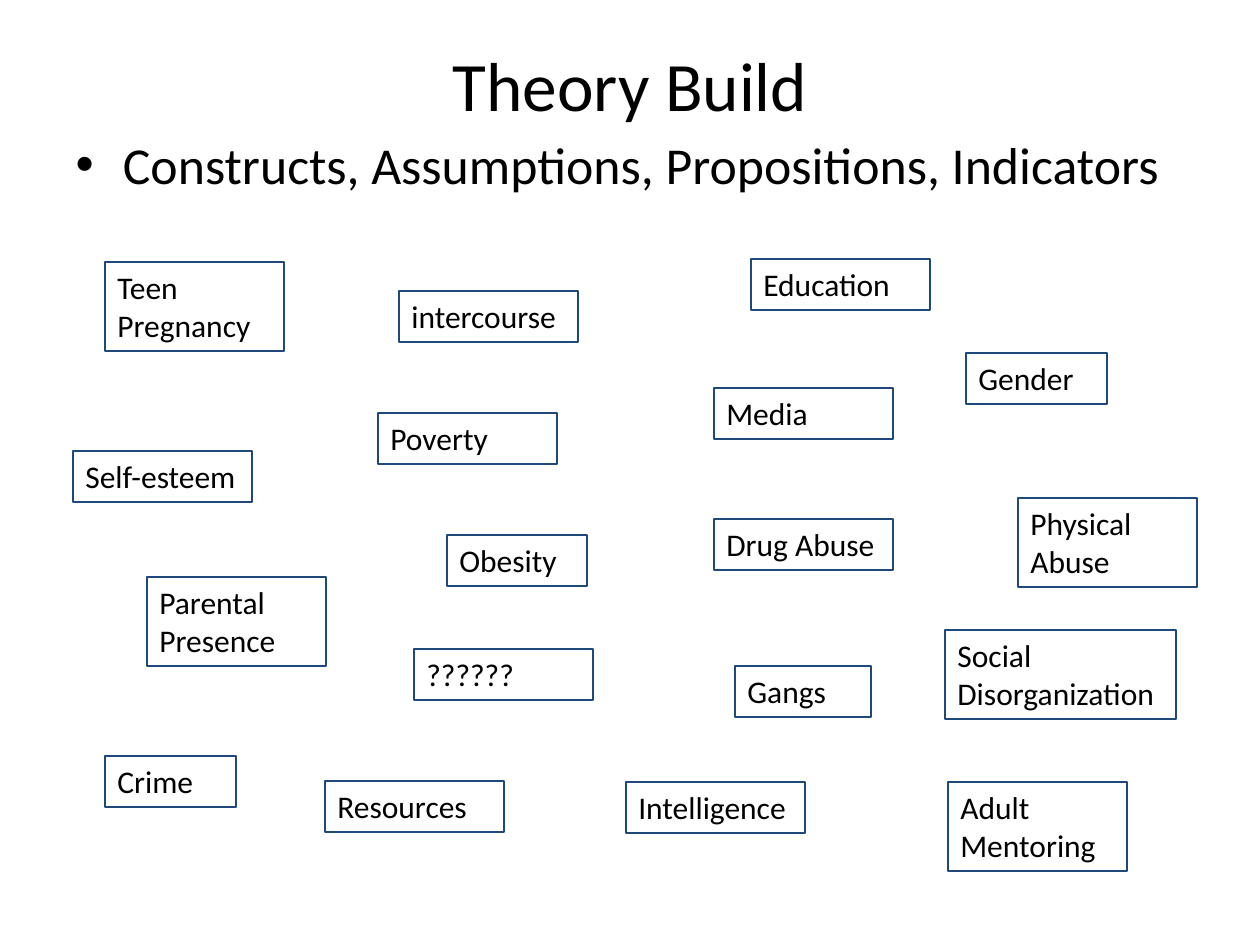
from pptx import Presentation
from pptx.dml.color import RGBColor
from pptx.enum.shapes import MSO_SHAPE
from pptx.enum.text import MSO_ANCHOR, MSO_AUTO_SIZE, PP_ALIGN
from pptx.util import Emu, Inches, Pt

PX_PER_INCH = 126
FONT = "Calibri"
BLACK, NAVY = "000000", "1F497D"
LINE_HEIGHT, BOX_PADDING = 38, 13
BOX_WIDTH = 179

# Text, left, top and, where it is not the usual one, width
ONE_LINE = [
    ("intercourse", 399, 291),
    ("Self-esteem", 73, 451),
    ("Poverty", 378, 413),
    ("Education", 751, 259),
    ("Crime", 105, 756, 131),
    ("Drug Abuse", 714, 519),
    ("Media", 714, 388),
    ("Gender", 966, 353, 141),
    ("Gangs", 735, 666, 136),
    ("Intelligence", 626, 782),
    ("Obesity", 447, 535, 140),
    ("??????", 414, 649),
    ("Resources", 325, 781),
]
TWO_LINES = [
    ("Teen Pregnancy", 105, 262),
    ("Parental Presence", 147, 577),
    ("Social Disorganization", 945, 630, 231),
    ("Physical\nAbuse", 1018, 498),
    ("Adult Mentoring", 948, 782),
]


def px(length):
    return Emu(round(length * Inches(1) / PX_PER_INCH))


def color(value):
    return RGBColor.from_string(value)


def place(shape, left, top, width, height):
    shape.left, shape.top = px(left), px(top)
    shape.width, shape.height = px(width), px(height)


def write(shape, text, size, alignment, anchor):
    text_frame = shape.text_frame
    text_frame.text = text
    text_frame.word_wrap = True
    text_frame.vertical_anchor = anchor
    for paragraph in text_frame.paragraphs:
        paragraph.alignment = alignment
        for run in paragraph.runs:
            run.font.name = FONT
            run.font.size = Pt(size)
            run.font.color.rgb = color(BLACK)


def add_heading(slide, left, top, width, row_height):
    """Title with one bullet line below it."""
    title, body = slide.shapes.title, slide.placeholders[1]
    place(title, left, top, width, row_height)
    write(title, "Theory Build", 39.6, PP_ALIGN.CENTER, MSO_ANCHOR.MIDDLE)
    place(body, left, top + row_height, width, row_height)
    write(body, "Constructs, Assumptions, Propositions, Indicators", 29.6,
          PP_ALIGN.LEFT, MSO_ANCHOR.TOP)
    for placeholder in (title, body):
        placeholder.text_frame.auto_size = MSO_AUTO_SIZE.NONE


def add_concept(slide, line_count, text, left, top, width=BOX_WIDTH):
    """Outlined box as tall as its lines of text."""
    height = line_count * LINE_HEIGHT + BOX_PADDING
    box = slide.shapes.add_shape(
        MSO_SHAPE.RECTANGLE, px(left), px(top), px(width), px(height))
    box.shadow.inherit = False
    box.fill.background()
    box.line.color.rgb = color(NAVY)
    box.line.width = Pt(0.75)
    write(box, text, 18, PP_ALIGN.LEFT, MSO_ANCHOR.TOP)
    box.text_frame.auto_size = MSO_AUTO_SIZE.SHAPE_TO_FIT_TEXT


def main():
    presentation = Presentation()
    presentation.slide_width, presentation.slide_height = px(1260), px(945)

    # The title and content layout supplies the title and the bullet line
    slide = presentation.slides.add_slide(presentation.slide_layouts[1])
    add_heading(slide, 63, 42, 1134, 84)

    # Scattered concepts
    for line_count, concepts in ((1, ONE_LINE), (2, TWO_LINES)):
        for concept in concepts:
            add_concept(slide, line_count, *concept)

    presentation.save("out.pptx")


if __name__ == "__main__":
    main()
